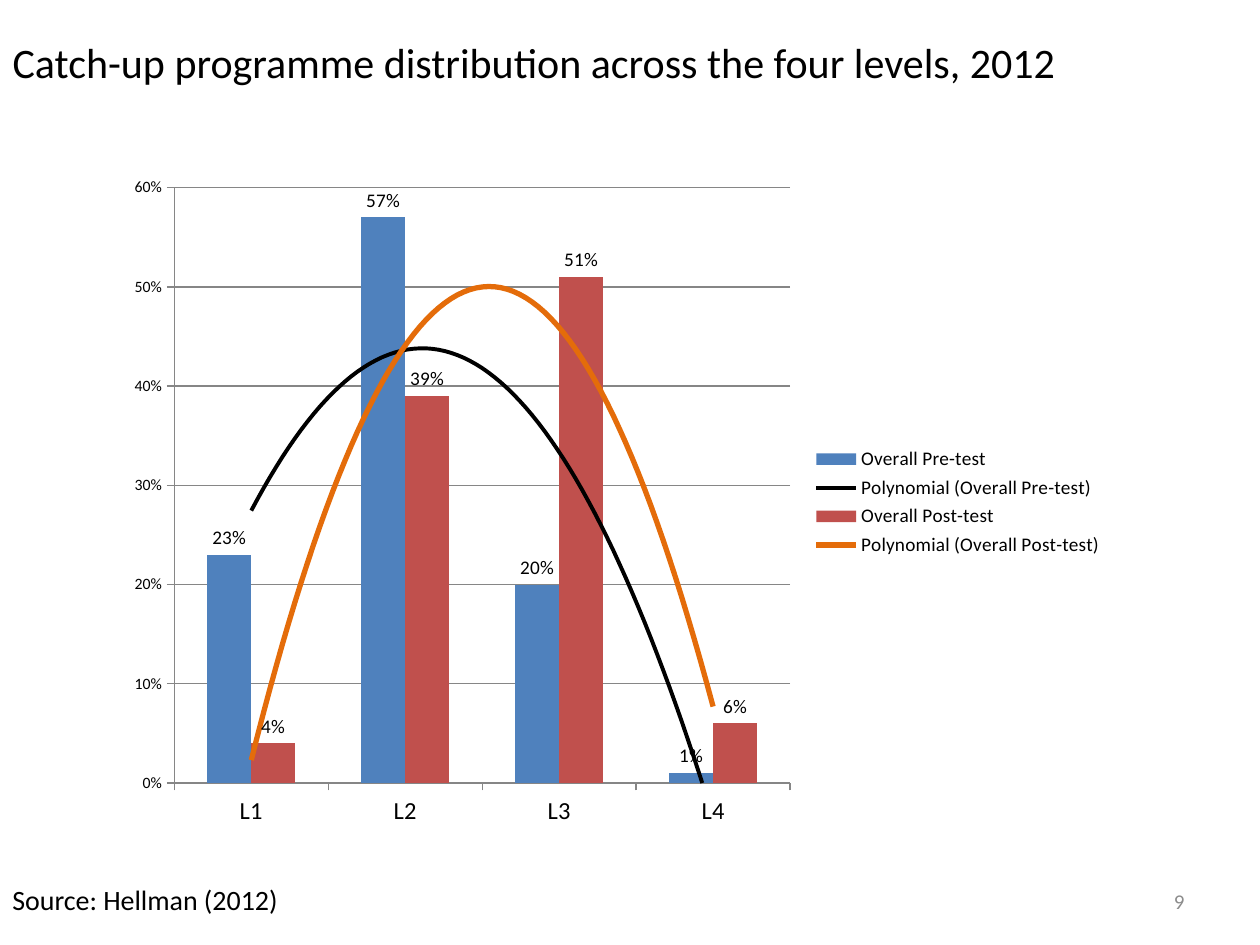
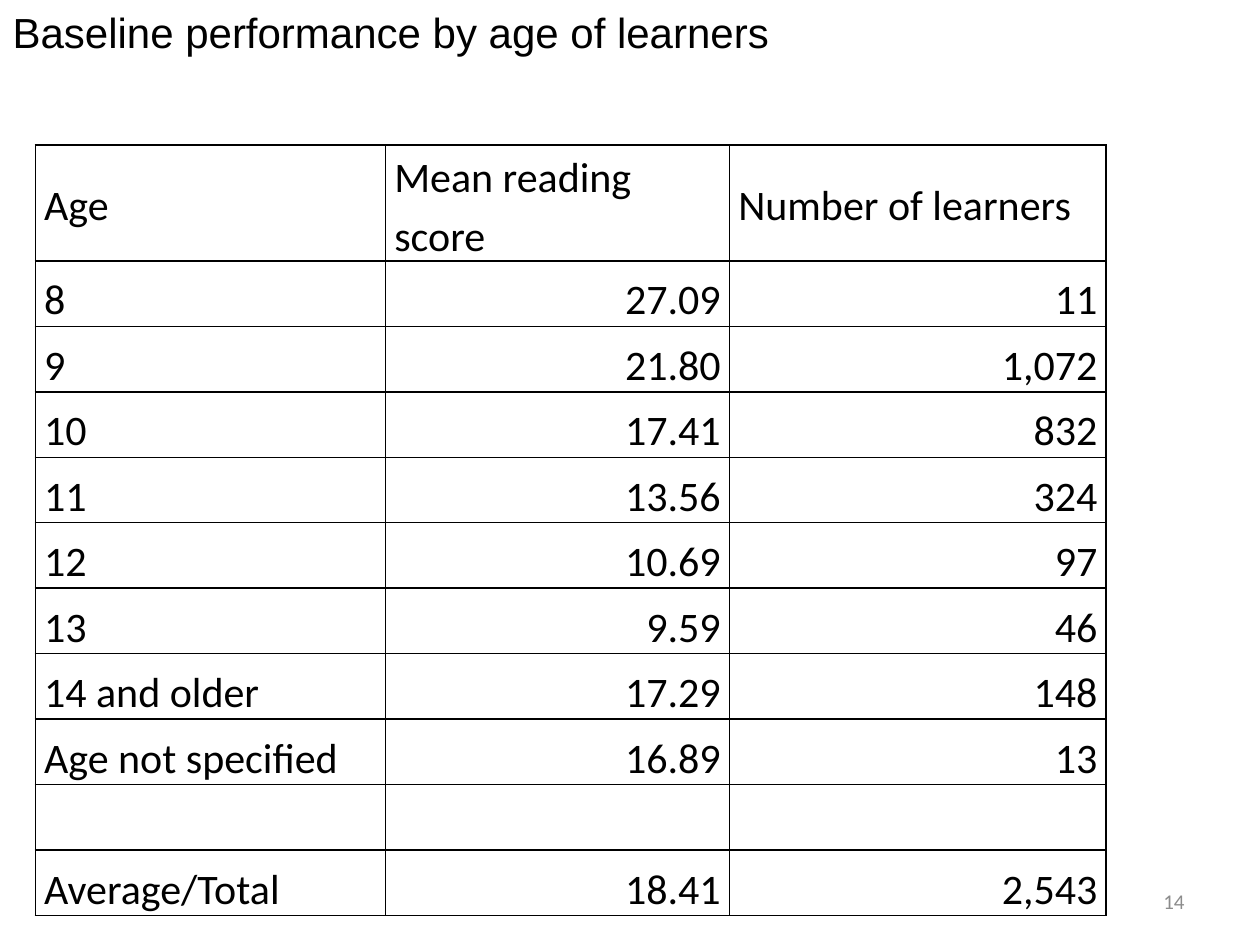
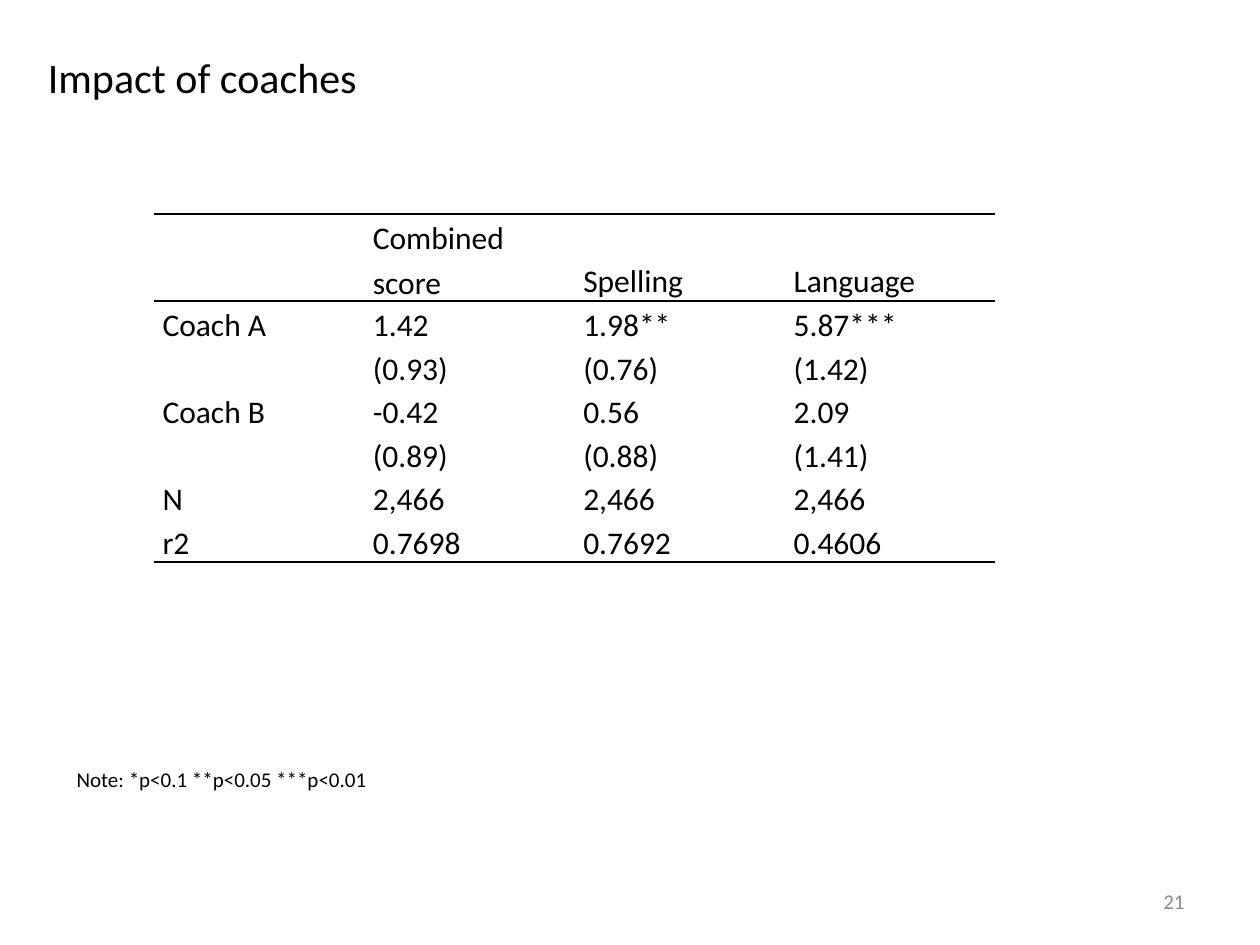
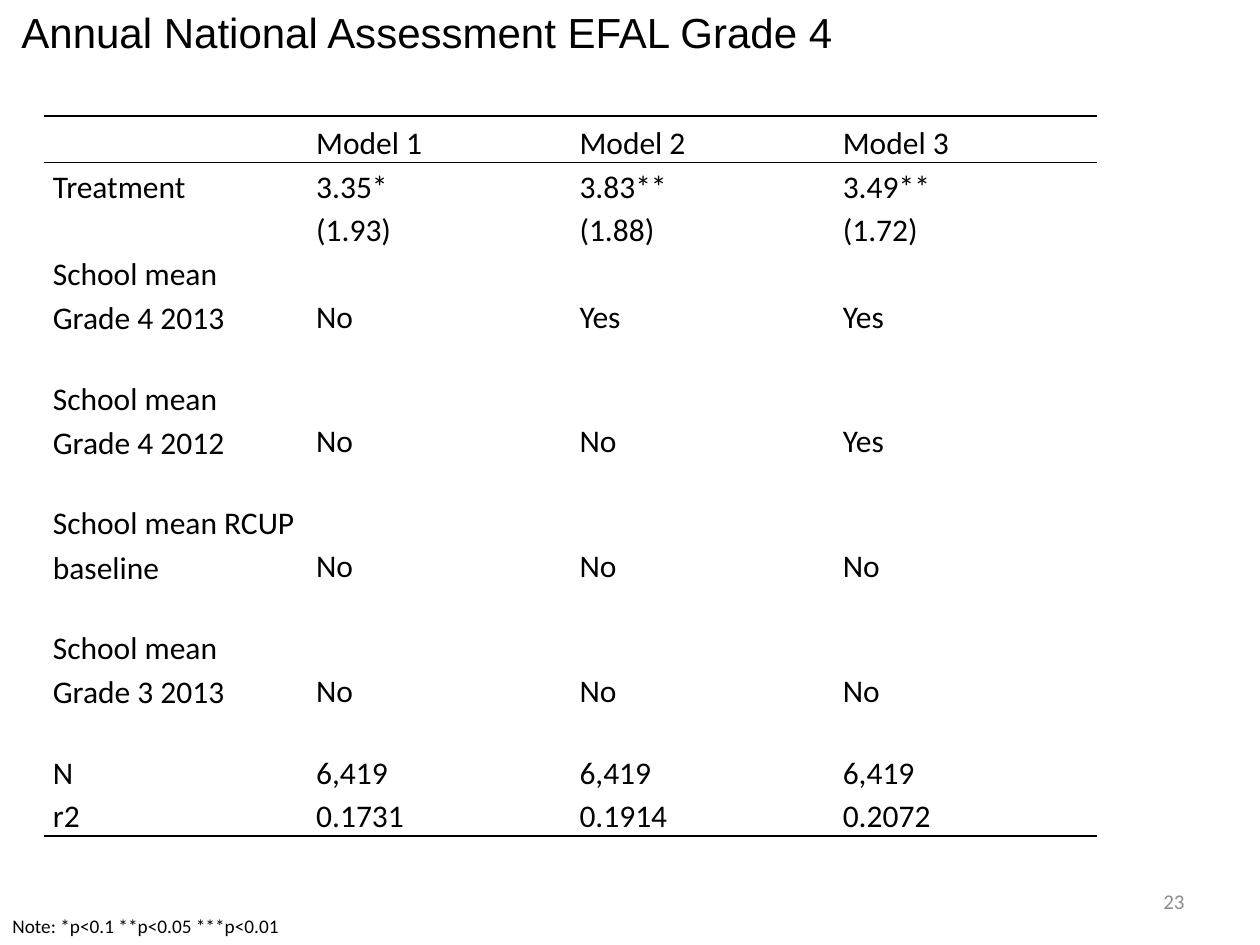
"""Build four slides on the results of a reading catch-up programme."""
from dataclasses import dataclass
from typing import Any

from lxml import etree
from pptx import Presentation
from pptx.chart.data import CategoryChartData
from pptx.dml.color import RGBColor
from pptx.enum.chart import XL_CHART_TYPE, XL_LABEL_POSITION, XL_LEGEND_POSITION, XL_TICK_MARK
from pptx.enum.text import MSO_ANCHOR, MSO_AUTO_SIZE, PP_ALIGN
from pptx.oxml import parse_xml
from pptx.oxml.ns import nsdecls, qn
from pptx.util import Emu, Pt

EMU_PER_PX = 9144
SLIDE_WIDTH, SLIDE_HEIGHT = 1000, 750
TITLE_ONLY = 5

BLACK = RGBColor(0x00, 0x00, 0x00)
GREY = RGBColor(0x8C, 0x8C, 0x8C)
AXIS_GREY = RGBColor(0x86, 0x86, 0x86)
BLUE = RGBColor(0x4F, 0x81, 0xBD)
RED = RGBColor(0xC0, 0x50, 0x4D)
ORANGE = RGBColor(0xE4, 0x6C, 0x0A)

BODY_FONT, HEADING_FONT = "Calibri", "Arial"
TITLE_SIZE = 24
SIGNIFICANCE_NOTE = "Note: *p<0.1 **p<0.05 ***p<0.01"

LEFT, RIGHT = PP_ALIGN.LEFT, PP_ALIGN.RIGHT
TOP, MIDDLE, BOTTOM = MSO_ANCHOR.TOP, MSO_ANCHOR.MIDDLE, MSO_ANCHOR.BOTTOM
FIT_SHAPE, NO_FIT = MSO_AUTO_SIZE.SHAPE_TO_FIT_TEXT, MSO_AUTO_SIZE.NONE
CLUSTERED = XL_CHART_TYPE.COLUMN_CLUSTERED
LEGEND_RIGHT = XL_LEGEND_POSITION.RIGHT
OUTSIDE_END = XL_LABEL_POSITION.OUTSIDE_END
TICK_OUTSIDE, TICK_NONE = XL_TICK_MARK.OUTSIDE, XL_TICK_MARK.NONE


def px(length: int) -> Emu:
    """Turn a length in px into EMU."""
    return Emu(length * EMU_PER_PX)


CELL_MARGINS = {
    "margin_left": px(7), "margin_right": px(7), "margin_top": 0, "margin_bottom": 0,
}
VALUE_AXIS_FORMAT = {
    "minimum_scale": 0, "maximum_scale": 0.6, "major_unit": 0.1,
    "has_major_gridlines": True, "major_tick_mark": TICK_OUTSIDE,
    "minor_tick_mark": TICK_NONE,
}
CATEGORY_AXIS_FORMAT = {"major_tick_mark": TICK_OUTSIDE, "minor_tick_mark": TICK_NONE}
PERCENT_FORMAT = {"number_format": "0%", "number_format_is_linked": False}
LABEL_FORMAT = {**PERCENT_FORMAT, "show_value": True, "position": OUTSIDE_END}
LEGEND_FORMAT = {"position": LEGEND_RIGHT, "include_in_layout": False}


@dataclass(frozen=True)
class Box:
    """A rectangle in px."""

    left: int
    top: int
    width: int
    height: int

    def emu(self) -> tuple[Emu, Emu, Emu, Emu]:
        """Return the four lengths in EMU."""
        return px(self.left), px(self.top), px(self.width), px(self.height)


@dataclass(frozen=True)
class Label:
    """A line of text and its style."""

    text: str
    box: Box
    size: int
    font: str = BODY_FONT
    color: RGBColor = BLACK
    align: PP_ALIGN = LEFT
    anchor: MSO_ANCHOR = TOP
    wrap: bool = False
    margin_left: int = 10


@dataclass(frozen=True)
class Grid:
    """A table with its column widths, row heights and borders."""

    left: int
    top: int
    columns: list[int]
    heights: list[int]
    rows: list[list[str]]
    size: int
    boxed: bool = False
    numbers_align: PP_ALIGN = LEFT
    header_anchor: MSO_ANCHOR = BOTTOM


@dataclass(frozen=True)
class TestSeries:
    """A column series with its trend line."""

    name: str
    values: list[float]
    color: RGBColor
    trend_color: RGBColor
    trend_width: float


TEST_SERIES = [
    TestSeries("Overall Pre-test", [0.23, 0.57, 0.20, 0.01], BLUE, BLACK, 2.25),
    TestSeries("Overall Post-test", [0.04, 0.39, 0.51, 0.06], RED, ORANGE, 3),
]

AGE_ROWS = [
    ["Age", "Mean reading score", "Number of learners"],
    ["8", "27.09", "11"],
    ["9", "21.80", "1,072"],
    ["10", "17.41", "832"],
    ["11", "13.56", "324"],
    ["12", "10.69", "97"],
    ["13", "9.59", "46"],
    ["14 and older", "17.29", "148"],
    ["Age not specified", "16.89", "13"],
    ["", "", ""],
    ["Average/Total", "18.41", "2,543"],
]
AGE_GRID = Grid(28, 115, [278, 273, 299], [52] * len(AGE_ROWS), AGE_ROWS, 24,
                boxed=True, numbers_align=RIGHT, header_anchor=MIDDLE)

COACH_ROWS = [
    ["", "Combined score", "Spelling", "Language"],
    ["Coach A", "1.42", "1.98**", "5.87***"],
    ["", "(0.93)", "(0.76)", "(1.42)"],
    ["Coach B", "-0.42", "0.56", "2.09"],
    ["", "(0.89)", "(0.88)", "(1.41)"],
    ["N", "2,466", "2,466", "2,466"],
    ["r2", "0.7698", "0.7692", "0.4606"],
]
COACH_GRID = Grid(122, 170, [167] * 4, [69] + [34] * 6, COACH_ROWS, 18)

MODEL_ROWS = [
    ["", "Model 1", "Model 2", "Model 3"],
    ["Treatment", "3.35*", "3.83**", "3.49**"],
    ["", "(1.93)", "(1.88)", "(1.72)"],
    ["School mean Grade 4 2013", "No", "Yes", "Yes"],
    [""] * 4,
    ["School mean Grade 4 2012", "No", "No", "Yes"],
    [""] * 4,
    ["School mean RCUP baseline", "No", "No", "No"],
    [""] * 4,
    ["School mean Grade 3 2013", "No", "No", "No"],
    [""] * 4,
    ["N", "6,419", "6,419", "6,419"],
    ["r2", "0.1731", "0.1914", "0.2072"],
]
MODEL_GRID = Grid(35, 92, [209] * 4, [37, 30, 30] + [60, 30] * 4 + [30, 30], MODEL_ROWS, 18)


def apply_format(target: Any, values: dict[str, Any]) -> None:
    """Set each named attribute on the target."""
    for name, value in values.items():
        setattr(target, name, value)


def style_font(font: Any, size: int, name: str = BODY_FONT, color: RGBColor = BLACK) -> None:
    """Set the size, typeface and colour of a font."""
    apply_format(font, {"size": Pt(size), "name": name})
    font.color.rgb = color


def fill_label(shape: Any, label: Label) -> None:
    """Place a text shape and write a label into it."""
    left, top, width, height = label.box.emu()
    apply_format(shape, {"left": left, "top": top, "width": width, "height": height})
    apply_format(shape.text_frame, {
        "word_wrap": label.wrap,
        "auto_size": NO_FIT if label.wrap else FIT_SHAPE,
        "vertical_anchor": label.anchor,
        "margin_left": px(label.margin_left), "margin_right": px(10),
        "margin_top": px(5), "margin_bottom": px(5),
    })
    paragraph = shape.text_frame.paragraphs[0]
    paragraph.alignment = label.align
    run = paragraph.add_run()
    run.text = label.text
    style_font(run.font, label.size, label.font, label.color)


def add_label(slide: Any, label: Label) -> None:
    """Add a text box for a label."""
    fill_label(slide.shapes.add_textbox(*label.box.emu()), label)


def add_titled_slide(presentation: Any, title: Label, number: int) -> Any:
    """Add a slide with its title and page number."""
    slide = presentation.slides.add_slide(presentation.slide_layouts[TITLE_ONLY])
    fill_label(slide.shapes.title, title)
    add_label(slide, Label(str(number), Box(717, 695, 233, 40), 12, color=GREY,
                           align=RIGHT, anchor=MIDDLE, wrap=True))
    return slide


def set_borders(cell: Any, widths: dict[str, float]) -> None:
    """Draw the given sides of a cell in black and clear the others."""
    properties = cell._tc.get_or_add_tcPr()
    for side in "LRTB":
        width = widths.get(side, 0)
        line = etree.SubElement(properties, qn(f"a:ln{side}"), w=str(Pt(width)))
        if width:
            fill = etree.SubElement(line, qn("a:solidFill"))
            etree.SubElement(fill, qn("a:srgbClr"), val=str(BLACK))
        else:
            etree.SubElement(line, qn("a:noFill"))


def border_widths(grid: Grid, row: int) -> dict[str, float]:
    """Return the border widths in points for the cells of a row."""
    if grid.boxed:
        return dict.fromkeys("LRTB", 1)
    if row == 0:
        return {"T": 1.5, "B": 1}
    if row == 1:
        return {"T": 1}
    return {"B": 1} if row == len(grid.rows) - 1 else {}


def add_grid(slide: Any, grid: Grid) -> None:
    """Add a table."""
    box = Box(grid.left, grid.top, sum(grid.columns), sum(grid.heights))
    table = slide.shapes.add_table(len(grid.rows), len(grid.columns), *box.emu()).table
    apply_format(table, {"first_row": False, "horz_banding": False})
    for column, width in zip(table.columns, grid.columns):
        column.width = px(width)
    for row_index, (row, height) in enumerate(zip(grid.rows, grid.heights)):
        table.rows[row_index].height = px(height)
        for column_index, text in enumerate(row):
            cell = table.cell(row_index, column_index)
            set_borders(cell, border_widths(grid, row_index))
            cell.fill.background()
            anchor = grid.header_anchor if row_index == 0 else BOTTOM
            apply_format(cell, {**CELL_MARGINS, "vertical_anchor": anchor})
            if text:
                paragraph = cell.text_frame.paragraphs[0]
                is_number = row_index > 0 and column_index > 0
                apply_format(paragraph, {
                    "line_spacing": 1.15,
                    "alignment": grid.numbers_align if is_number else LEFT,
                })
                run = paragraph.add_run()
                run.text = text
                style_font(run.font, grid.size)


def add_trend_line(series: Any, color: RGBColor, width: float) -> None:
    """Add a second-order polynomial trend line to a series."""
    trend_line = parse_xml(
        f'<c:trendline {nsdecls("c", "a")}><c:spPr><a:ln w="{Pt(width)}">'
        f'<a:solidFill><a:srgbClr val="{color}"/></a:solidFill></a:ln></c:spPr>'
        '<c:trendlineType val="poly"/><c:order val="2"/>'
        '<c:dispRSqr val="0"/><c:dispEq val="0"/></c:trendline>'
    )
    series._element.find(qn("c:cat")).addprevious(trend_line)


def add_level_chart(slide: Any, box: Box) -> None:
    """Add the column chart of test results by level."""
    data = CategoryChartData(number_format="0%")
    data.categories = ["L1", "L2", "L3", "L4"]
    for test in TEST_SERIES:
        data.add_series(test.name, test.values)
    chart = slide.shapes.add_chart(CLUSTERED, *box.emu(), data).chart
    apply_format(chart, {"has_title": False, "has_legend": True})
    style_font(chart.font, 14)
    apply_format(chart.legend, LEGEND_FORMAT)
    style_font(chart.legend.font, 11)

    apply_format(chart.value_axis, VALUE_AXIS_FORMAT)
    apply_format(chart.category_axis, CATEGORY_AXIS_FORMAT)
    apply_format(chart.value_axis.tick_labels, PERCENT_FORMAT)
    style_font(chart.value_axis.tick_labels.font, 9)
    style_font(chart.category_axis.tick_labels.font, 14)
    for part in (chart.value_axis, chart.category_axis, chart.value_axis.major_gridlines):
        part.format.line.color.rgb = AXIS_GREY
        part.format.line.width = Pt(0.75)

    plot = chart.plots[0]
    apply_format(plot, {"gap_width": 150, "vary_by_categories": False})
    for series, test in zip(plot.series, TEST_SERIES):
        series.format.fill.solid()
        series.format.fill.fore_color.rgb = test.color
        apply_format(series.data_labels, LABEL_FORMAT)
        style_font(series.data_labels.font, 11)
        add_trend_line(series, test.trend_color, test.trend_width)


def main() -> None:
    """Build and save the presentation."""
    presentation = Presentation()
    apply_format(presentation, {"slide_width": px(SLIDE_WIDTH), "slide_height": px(SLIDE_HEIGHT)})

    slide = add_titled_slide(presentation, Label(
        "Catch-up programme distribution across the four levels, 2012",
        Box(0, 24, 855, 91), TITLE_SIZE), 9)
    add_level_chart(slide, Box(91, 131, 795, 535))
    add_label(slide, Label("Source: Hellman (2012)", Box(0, 695, 234, 37), 16, anchor=MIDDLE))

    slide = add_titled_slide(presentation, Label(
        "Baseline performance by age of learners",
        Box(0, 0, 647, 50), TITLE_SIZE, HEADING_FONT, anchor=MIDDLE), 14)
    add_grid(slide, AGE_GRID)

    slide = add_titled_slide(presentation, Label(
        "Impact of coaches", Box(28, 36, 268, 50), TITLE_SIZE), 21)
    add_grid(slide, COACH_GRID)
    add_label(slide, Label(SIGNIFICANCE_NOTE, Box(51, 603, 253, 30), 12, anchor=MIDDLE))

    slide = add_titled_slide(presentation, Label(
        "Annual National Assessment EFAL Grade 4",
        Box(0, 0, 678, 50), TITLE_SIZE, HEADING_FONT, anchor=MIDDLE, margin_left=17), 23)
    add_grid(slide, MODEL_GRID)
    add_label(slide, Label(SIGNIFICANCE_NOTE, Box(0, 721, 234, 29), 11))

    presentation.save("out.pptx")


if __name__ == "__main__":
    main()
